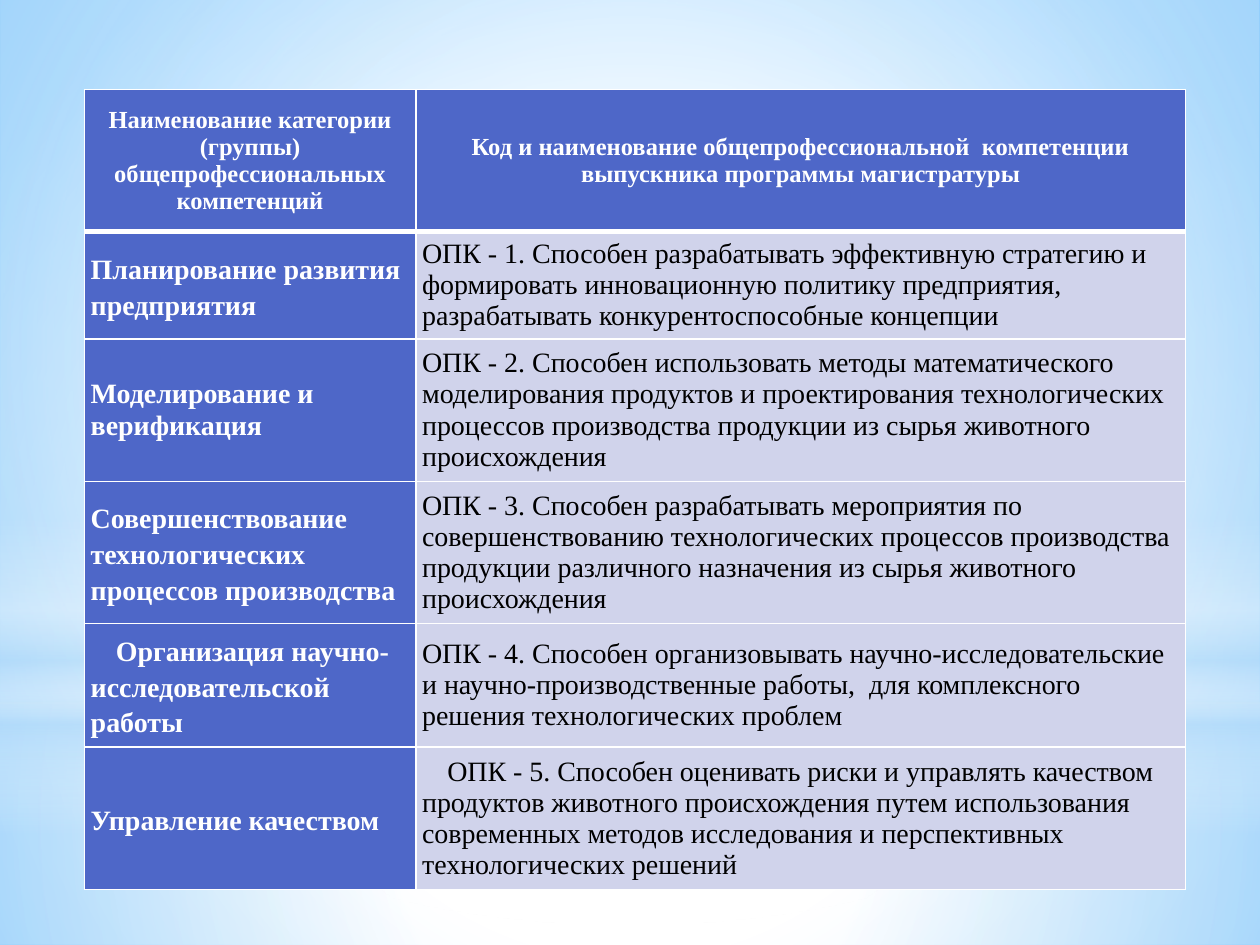
import dataclasses
import typing

import pptx
import pptx.dml.color
import pptx.enum.shapes
import pptx.enum.text
import pptx.oxml
import pptx.oxml.ns
import pptx.util

Inches = pptx.util.Inches
Kind = pptx.enum.shapes.MSO_SHAPE
Align = pptx.enum.text.PP_ALIGN
Stop = tuple[int, str, int]  # position %, colour, opacity %


@dataclasses.dataclass(frozen=True)
class Theme:
    font: str = "Times New Roman"
    white: str = "FFFFFF"
    black: str = "000000"
    sky: str = "63BCFF"
    pale: str = "B4DCFA"
    blue: str = "4E67C8"
    lilac: str = "D0D3EB"
    head: int = 14
    body: int = 16
    thin: int = 1
    thick: int = 3


T = Theme()


class Glow(typing.NamedTuple):
    kind: Kind
    top: float
    height: float
    stops: list[Stop]
    rect: tuple[int, ...] | None = (50, 50, 50, 50)


class Entry(typing.NamedTuple):
    text: str
    size: int = T.body
    bold: bool = True
    color: str = T.white
    fill: str = T.blue
    align: Align = Align.LEFT
    space: float = 1.0
    indent: float = 0


def label(text: str, space: float = 1.15, indent: float = 0) -> Entry:
    return Entry(text, space=space, indent=indent)


def skill(text: str, indent: float = 0) -> Entry:
    return Entry(text, bold=False, color=T.black, fill=T.lilac, indent=indent)


def title(text: str) -> Entry:
    return Entry(text, size=T.head, align=Align.CENTER)


GLOWS = [
    Glow(Kind.RECTANGLE, 5.58, 1.92,
         [(0, T.white, 91), (37, T.white, 76), (100, T.pale, 79)]),
    Glow(Kind.RECTANGLE, 0, 5.58,
         [(0, T.white, 89), (48, T.white, 62), (100, T.pale, 79)]),
    Glow(Kind.RECTANGLE, 4.12, 2.5,
         [(0, T.white, 0), (29, T.white, 30), (45, T.pale, 40),
          (55, T.white, 26), (65, T.pale, 60), (100, T.white, 0)], None),
    Glow(Kind.OVAL, 1.75, 5.58, [(0, T.white, 100), (56, T.white, 0)]),
]

COLS = [2.63, 6.11]
ROWS = [1.13, 0.85, 1.13, 1.13, 0.98, 1.13]
CELLS = [
    (title("Наименование категории (группы) общепрофессиональных компетенций"),
     title("Код и наименование общепрофессиональной  компетенции выпускника "
           "программы магистратуры")),
    (label("Планирование развития предприятия"),
     skill("ОПК - 1. Способен разрабатывать эффективную стратегию и формировать "
           "инновационную политику предприятия, разрабатывать "
           "конкурентоспособные концепции")),
    (label("Моделирование и верификация", space=1.0),
     skill("ОПК - 2. Способен использовать методы математического моделирования "
           "продуктов и проектирования технологических процессов производства "
           "продукции из сырья животного происхождения")),
    (label("Совершенствование технологических процессов производства"),
     skill("ОПК - 3. Способен разрабатывать мероприятия по совершенствованию "
           "технологических процессов производства продукции различного "
           "назначения из сырья животного происхождения")),
    (label("Организация научно-исследовательской работы", indent=0.2),
     skill("ОПК - 4. Способен организовывать научно-исследовательские и "
           "научно-производственные работы,  для комплексного решения "
           "технологических проблем")),
    (label("Управление качеством"),
     skill("ОПК - 5. Способен оценивать риски и управлять качеством продуктов "
           "животного происхождения путем использования современных методов "
           "исследования и перспективных технологических решений", indent=0.2)),
]


def apply(target: typing.Any, form: dict[str, typing.Any]) -> None:
    for name, value in form.items():
        setattr(target, name, value)


def rgb(code: str) -> pptx.dml.color.RGBColor:
    return pptx.dml.color.RGBColor.from_string(code)


def shade(stops: list[Stop], rect: tuple[int, ...] | None) -> typing.Any:
    """Radial gradient around rect, or a downward one without it."""
    marks = "".join(
        f'<a:gs pos="{pos * 1000}"><a:srgbClr val="{color}">'
        f'<a:alpha val="{alpha * 1000}"/></a:srgbClr></a:gs>'
        for pos, color, alpha in stops)
    if rect:
        sides = " ".join(f'{side}="{part * 1000}"' for side, part in zip("ltrb", rect))
        course = f'<a:path path="circle"><a:fillToRect {sides}/></a:path>'
    else:
        course = '<a:lin ang="5400000" scaled="0"/>'
    return pptx.oxml.parse_xml(
        f'<a:gradFill {pptx.oxml.ns.nsdecls("a")} rotWithShape="1">'
        f'<a:gsLst>{marks}</a:gsLst>{course}</a:gradFill>')


def swap(holder: typing.Any, tag: str, fill: typing.Any) -> None:
    holder.replace(holder.find(pptx.oxml.ns.qn(tag)), fill)


def paint(slide: typing.Any) -> None:
    slide.background.fill.solid()
    holder = slide.element.find(".//" + pptx.oxml.ns.qn("p:bgPr"))
    stops = [(0, T.white, 100), (42, T.white, 100), (100, T.sky, 100)]
    swap(holder, "a:solidFill", shade(stops, (24, 44, 24, 12)))


def cast(slide: typing.Any, glow: Glow) -> None:
    shape = slide.shapes.add_shape(
        glow.kind, 0, Inches(glow.top), Inches(10), Inches(glow.height))
    shape.shadow.inherit = False
    shape.line.fill.background()
    shape.fill.background()
    swap(shape.element.spPr, "a:noFill", shade(glow.stops, glow.rect))


def frame(cell: typing.Any, top: int, low: int) -> None:
    props = cell._tc.get_or_add_tcPr()
    for spot, (side, width) in enumerate(zip("LRTB", (T.thin, T.thin, top, low))):
        props.insert(spot, pptx.oxml.parse_xml(
            f'<a:ln{side} {pptx.oxml.ns.nsdecls("a")} w="{pptx.util.Pt(width)}">'
            f'<a:solidFill><a:srgbClr val="{T.white}"/></a:solidFill></a:ln{side}>'))


def write(cell: typing.Any, entry: Entry) -> None:
    apply(cell, {
        "margin_left": Inches(0.05), "margin_right": Inches(0.05),
        "margin_top": 0, "margin_bottom": 0,
        "vertical_anchor": pptx.enum.text.MSO_ANCHOR.MIDDLE})
    cell.fill.solid()
    cell.fill.fore_color.rgb = rgb(entry.fill)
    para = cell.text_frame.paragraphs[0]
    apply(para, {"alignment": entry.align, "line_spacing": entry.space})
    if entry.indent:
        para._p.get_or_add_pPr().set("indent", str(Inches(entry.indent)))
    run = para.add_run()
    run.text = entry.text
    apply(run.font, {"name": T.font, "size": pptx.util.Pt(entry.size),
                     "bold": entry.bold})
    run.font.color.rgb = rgb(entry.color)


def fill(slide: typing.Any) -> None:
    table = slide.shapes.add_table(
        len(ROWS), len(COLS), Inches(0.67), Inches(0.71),
        Inches(sum(COLS)), Inches(sum(ROWS))).table
    for col, width in zip(table.columns, COLS):
        col.width = Inches(width)
    for at, (row, height) in enumerate(zip(table.rows, ROWS)):
        row.height = Inches(height)
        for cell, entry in zip(row.cells, CELLS[at]):
            write(cell, entry)
            # The heavy rule runs between the header and the first row
            frame(cell, T.thick if at == 1 else T.thin,
                  T.thick if at == 0 else T.thin)


def main() -> None:
    deck = pptx.Presentation()
    apply(deck, {"slide_width": Inches(10), "slide_height": Inches(7.5)})
    slide = deck.slides.add_slide(deck.slide_layouts[6])
    # Backdrop
    paint(slide)
    for glow in GLOWS:
        cast(slide, glow)
    # Competence table
    fill(slide)
    deck.save("out.pptx")


if __name__ == "__main__":
    main()
